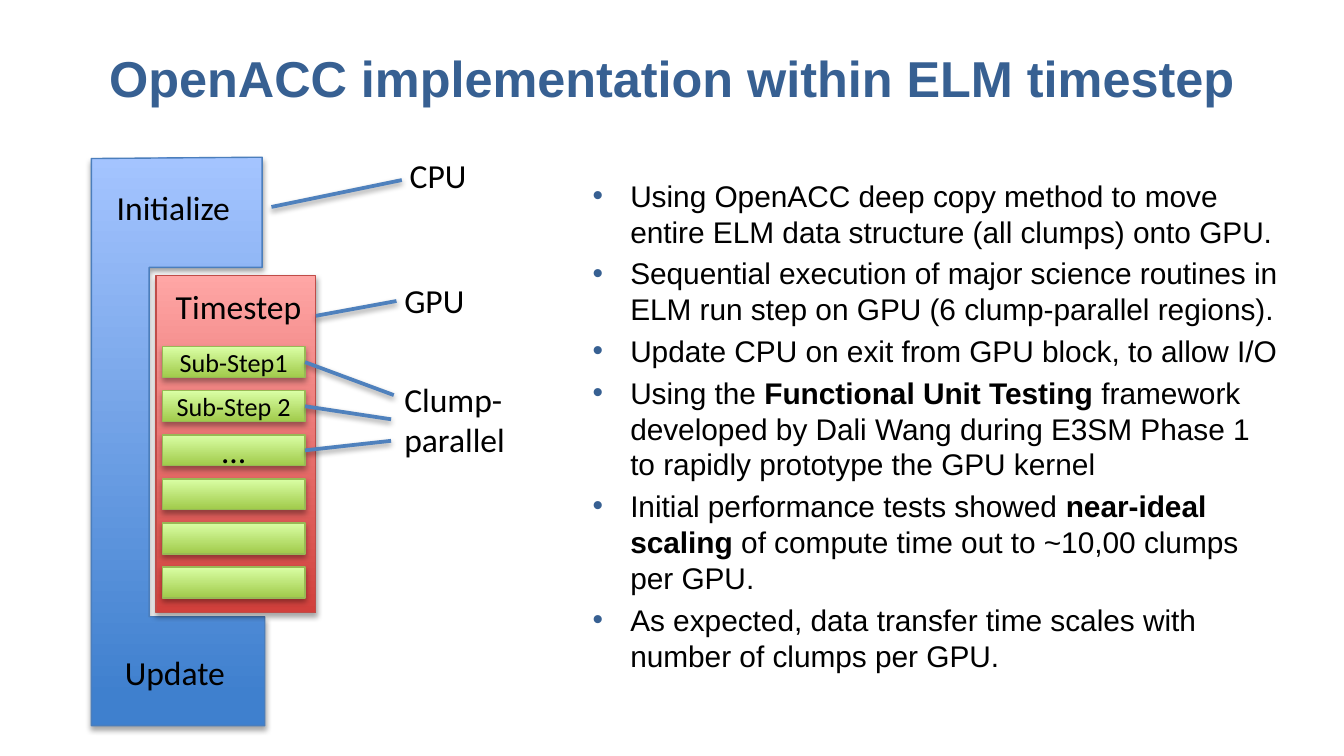
"""Build the slide on the OpenACC implementation within the ELM timestep."""
from lxml import etree
from pptx import Presentation
from pptx.dml.color import RGBColor
from pptx.enum import shapes, text
from pptx.oxml import ns
from pptx.util import Emu, Inches, Pt

THEME = {
    "heading": "376092", "ink": "000000", "link": "4F81BD",
    "host": ("3F80CE", "A4C4FF", "4B7EBC"),
    "device": ("D1403C", "FFA6A5", "BF4C48"),
    "step": ("A0CA4A", "DAFFA5", "98B955"),
    "title_size": 27, "body_size": 16, "label_size": 18, "step_size": 14,
    "body_font": "Arial", "label_font": "Calibri",
}

TITLE = "OpenACC implementation within ELM timestep"
POINTS = [
    [("Using OpenACC deep copy method to move entire ELM data structure (all clumps) onto GPU.", False)],
    [("Sequential execution of major science routines in ELM run step on GPU (6 clump-parallel regions).", False)],
    [("Update CPU on exit from GPU block, to allow I/O", False)],
    [("Using the ", False), ("Functional Unit Testing ", True),
     ("framework developed by Dali Wang during E3SM Phase 1 to rapidly prototype the GPU kernel", False)],
    [("Initial performance tests showed ", False), ("near-ideal scaling ", True),
     ("of compute time out to ~10,00 clumps per GPU.", False)],
    [("As expected, data transfer time scales with number of clumps per GPU.", False)],
]
HOST_OUTLINE = [(0.68, 1.18), (0.68, 5.4), (1.97, 5.4), (1.97, 4.59),
                (1.11, 4.59), (1.11, 1.99), (1.95, 1.99), (1.95, 1.17)]
TIMESTEP_BOX = (1.16, 2.05, 1.19, 2.51)
LABELS = [
    ("Initialize", (0.77, 1.34, 1.09, 0.4), "LEFT"),
    ("Update", (0.83, 4.8, 1.09, 0.4), "LEFT"),
    ("Timestep", (1.18, 2.08, 1.19, 0.4), "CENTER"),
    ("CPU", (2.95, 1.1, 0.72, 0.42), "LEFT"),
    ("GPU", (2.91, 2.03, 0.96, 0.42), "LEFT"),
    ("Clump-parallel", (2.91, 2.77, 0.96, 0.71), "LEFT"),
]
STEPS = [("Sub-Step1", "step_size"), ("Sub-Step 2", "step_size"), ("…", "label_size"),
         None, None, None]
STEP_LEFT, STEP_TOP, STEP_WIDTH, STEP_HEIGHT = 1.21, 2.58, 1.06, 0.23
STEP_PITCH = (4.22 - STEP_TOP) / (len(STEPS) - 1)
CPU_GPU_LINKS = [((2.02, 1.54), (2.99, 1.34)), ((2.35, 2.35), (2.95, 2.24))]
CLUMP_ENDS = [(2.93, 2.94), (2.91, 3.12), (2.91, 3.28)]


def rgb(value):
    return RGBColor.from_string(value)


def inches(values):
    return [Inches(value) for value in values]


def add_run(paragraph, words, size, font, color="ink", bold=False):
    run = paragraph.add_run()
    run.text = words
    run.font.size = Pt(THEME[size])
    run.font.name = THEME[font]
    run.font.bold = bold
    run.font.color.rgb = rgb(THEME[color])


def add_frame(slide, box, margin=None):
    frame = slide.shapes.add_textbox(*inches(box)).text_frame
    frame.word_wrap = True
    if margin is not None:
        frame.margin_left = frame.margin_right = Inches(margin)
        frame.margin_top = frame.margin_bottom = Inches(margin)
    return frame


def add_shadow(shape, opacity, distance):
    effects = etree.SubElement(shape._element.spPr, ns.qn("a:effectLst"))
    shadow = etree.SubElement(effects, ns.qn("a:outerShdw"), blurRad=str(Pt(3.1)),
                              dist=str(Pt(distance)), dir="5400000", rotWithShape="0")
    color = etree.SubElement(shadow, ns.qn("a:srgbClr"), val=THEME["ink"])
    etree.SubElement(color, ns.qn("a:alpha"), val=str(opacity * 1000))


def paint(shape, role, first_stop=0):
    dark, light, edge = THEME[role]
    shape.fill.gradient()
    shape.fill.gradient_angle = 90
    for stop, color, position in zip(shape.fill.gradient_stops, (dark, light), (first_stop, 1)):
        stop.color.rgb = rgb(color)
        stop.position = position
    shape.line.color.rgb = rgb(edge)
    shape.line.width = Pt(0.75)
    add_shadow(shape, 35, 1.8)


def add_block(slide, box, role):
    block = slide.shapes.add_shape(shapes.MSO_SHAPE.RECTANGLE, *inches(box))
    paint(block, role)
    return block


def add_link(slide, start, end):
    link = slide.shapes.add_connector(shapes.MSO_CONNECTOR.STRAIGHT, *inches(start + end))
    link.line.color.rgb = rgb(THEME["link"])
    link.line.width = Pt(2)
    add_shadow(link, 38, 1.6)


def add_bullet(paragraph):
    properties = paragraph._p.get_or_add_pPr()
    properties.set("marL", str(Inches(0.28)))
    properties.set("indent", str(Inches(-0.28)))
    color = etree.SubElement(properties, ns.qn("a:buClr"))
    etree.SubElement(color, ns.qn("a:srgbClr"), val=THEME["heading"])
    etree.SubElement(properties, ns.qn("a:buFont"), typeface=THEME["body_font"])
    etree.SubElement(properties, ns.qn("a:buChar"), char="•")


def add_title(slide):
    frame = add_frame(slide, (0.5, 0.23, 9, 0.57), 0)
    frame.vertical_anchor = text.MSO_ANCHOR.BOTTOM
    heading = frame.paragraphs[0]
    heading.alignment = text.PP_ALIGN.CENTER
    add_run(heading, TITLE, "title_size", "body_font", "heading", True)


def add_points(slide):
    frame = add_frame(slide, (4.41, 1.32, 5.13, 3.38), 0)
    for index, point in enumerate(POINTS):
        paragraph = frame.add_paragraph() if index else frame.paragraphs[0]
        add_bullet(paragraph)
        if index:
            paragraph.space_before = Pt(3.2)
        for words, bold in point:
            add_run(paragraph, words, "body_size", "body_font", bold=bold)


def add_diagram(slide):
    corners = [tuple(inches(corner)) for corner in HOST_OUTLINE]
    outline = slide.shapes.build_freeform(*corners[0], scale=1.0)
    outline.add_line_segments(corners[1:], close=True)
    paint(outline.convert_to_shape(Emu(0), Emu(0)), "host", 0.05)
    add_block(slide, TIMESTEP_BOX, "device")

    for words, box, alignment in LABELS:
        label = add_frame(slide, box).paragraphs[0]
        label.alignment = text.PP_ALIGN[alignment]
        add_run(label, words, "label_size", "label_font")

    for index, step in enumerate(STEPS):
        top = STEP_TOP + index * STEP_PITCH
        block = add_block(slide, (STEP_LEFT, top, STEP_WIDTH, STEP_HEIGHT), "step")
        if step:
            frame = block.text_frame
            frame.word_wrap = False
            frame.vertical_anchor = text.MSO_ANCHOR.MIDDLE
            frame.paragraphs[0].alignment = text.PP_ALIGN.CENTER
            add_run(frame.paragraphs[0], *step, "label_font")

    for start, end in CPU_GPU_LINKS:
        add_link(slide, start, end)
    for index, end in enumerate(CLUMP_ENDS):
        middle = STEP_TOP + index * STEP_PITCH + STEP_HEIGHT / 2
        add_link(slide, (STEP_LEFT + STEP_WIDTH, middle), end)


def main():
    deck = Presentation()
    deck.slide_width = Inches(10)
    deck.slide_height = deck.slide_width * 9 // 16
    slide = deck.slides.add_slide(deck.slide_layouts[6])
    add_title(slide)
    add_points(slide)
    add_diagram(slide)
    deck.save("out.pptx")


if __name__ == "__main__":
    main()
